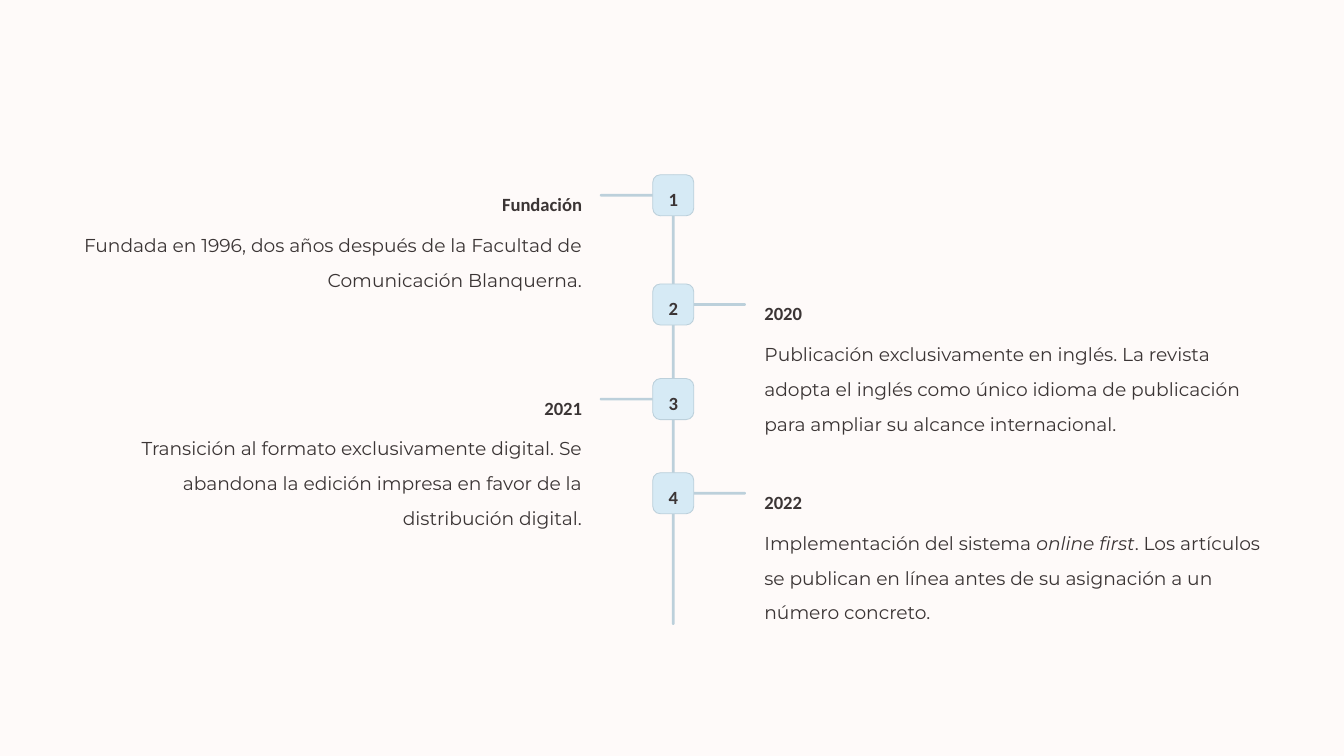
from dataclasses import dataclass

from pptx import Presentation
from pptx import util as u
from pptx.dml.color import RGBColor
from pptx.enum import shapes, text
from pptx.shapes.autoshape import Shape
from pptx.slide import Slide

COLOURS = {"background": "FEFAF9", "line": "BCD0DB", "badge": "D6EAF5", "ink": "3B3535"}
BADGE_LEFT, BADGE_SIZE = 559.5, 35.2
BAR = 2.2
STEM_LENGTH = 46.8
TITLE_WIDTH, BODY_WIDTH = 195, 435.6
LEFT_TEXT_EDGE, RIGHT_TEXT_EDGE = 498.9, 655.2


@dataclass(frozen=True)
class Span:
    words: str
    font: str = "Montserrat"
    bold: bool = False
    italic: bool = False


@dataclass(frozen=True)
class Milestone:
    top: float
    title: str
    body: tuple[Span, ...]


MILESTONES = (
    Milestone(149.8, "Fundación", (
        Span("Fundada en 1996, dos años después de la Facultad de Comunicación Blanquerna."),
    )),
    Milestone(243.4, "2020", (
        Span("Publicación exclusivamente en inglés. La revista adopta el inglés como único "
             "idioma de publicación para ampliar su alcance internacional."),
    )),
    Milestone(324.5, "2021", (
        Span("Transición al formato exclusivamente digital. Se abandona la edición impresa "
             "en favor de la distribución digital."),
    )),
    Milestone(405.2, "2022", (
        Span("Implementación del sistema "),
        Span("online first", italic=True),
        Span(". Los artículos se publican en línea antes de su asignación a un número concreto."),
    )),
)


def colour(name: str) -> RGBColor:
    return RGBColor.from_string(COLOURS[name])


def add_rounded(page: Slide, left: float, top: float, width: float, height: float,
                fill: str, rounding: float) -> Shape:
    shape = page.shapes.add_shape(shapes.MSO_SHAPE.ROUNDED_RECTANGLE,
                                  u.Pt(left), u.Pt(top), u.Pt(width), u.Pt(height))
    shape.adjustments[0] = rounding
    shape.shadow.inherit = False
    shape.fill.solid()
    shape.fill.fore_color.rgb = colour(fill)
    shape.line.fill.background()
    return shape


def add_bar(page: Slide, left: float, top: float, width: float, height: float) -> None:
    add_rounded(page, left, top, width, height, "line", 0.5)


def add_text(page: Slide, left: float, top: float, width: float, height: float,
             spans: tuple[Span, ...], align: text.PP_ALIGN, spacing: float) -> None:
    box = page.shapes.add_textbox(u.Pt(left), u.Pt(top), u.Pt(width), u.Pt(height))
    frame = box.text_frame
    frame.word_wrap = True
    frame.margin_left = frame.margin_right = frame.margin_top = frame.margin_bottom = u.Pt(0)
    para = frame.paragraphs[0]
    para.alignment = align
    para.line_spacing = spacing
    for span in spans:
        run = para.add_run()
        run.text = span.words
        run.font.name = span.font
        run.font.size = u.Pt(16)
        run.font.bold = span.bold
        run.font.italic = span.italic
        run.font.color.rgb = colour("ink")


def add_milestone(page: Slide, number: int, milestone: Milestone) -> None:
    top = milestone.top
    on_left = number % 2 == 1
    stem_left = 514.1 if on_left else 592.6
    add_bar(page, stem_left, top + 16.5, STEM_LENGTH, BAR)

    badge = add_rounded(page, BADGE_LEFT, top, BADGE_SIZE, BADGE_SIZE, "badge", 0.187)
    badge.line.color.rgb = colour("line")
    badge.line.width = u.Pt(0.75)
    add_text(page, BADGE_LEFT + 5.8, top + 2.9, 23.6, 29.5,
             (Span(str(number), "Calibri", bold=True),), text.PP_ALIGN.CENTER, 1.44)

    align = text.PP_ALIGN.RIGHT if on_left else text.PP_ALIGN.LEFT
    title_left = LEFT_TEXT_EDGE - TITLE_WIDTH if on_left else RIGHT_TEXT_EDGE
    body_left = LEFT_TEXT_EDGE - BODY_WIDTH if on_left else RIGHT_TEXT_EDGE
    add_text(page, title_left, top + 5.8, TITLE_WIDTH, 24.5,
             (Span(milestone.title, "Calibri", bold=True),), align, 1.5)
    add_text(page, body_left, top + 39.6, BODY_WIDTH, 74.9, milestone.body, align, 1.56)


def main() -> None:
    deck = Presentation()
    deck.slide_width, deck.slide_height = u.Pt(1152), u.Pt(648)
    page = deck.slides.add_slide(deck.slide_layouts[6])
    page.background.fill.solid()
    page.background.fill.fore_color.rgb = colour("background")
    add_bar(page, 576, MILESTONES[0].top, BAR, 385.9)
    for number, milestone in enumerate(MILESTONES, start=1):
        add_milestone(page, number, milestone)
    deck.save("out.pptx")


if __name__ == "__main__":
    main()
